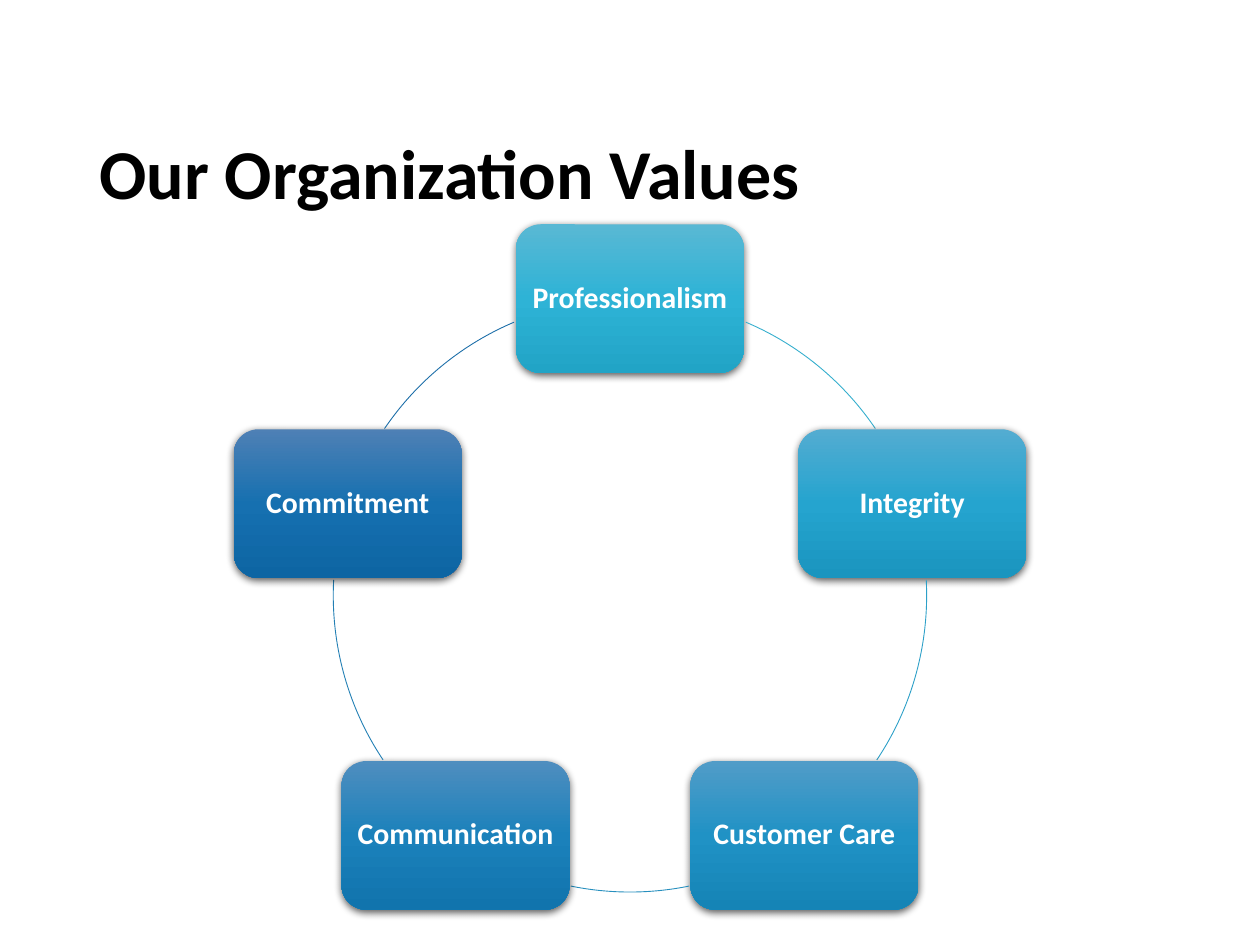
"""Build the organization values slide: five boxes joined by a ring of arcs."""
from copy import deepcopy
from dataclasses import dataclass
from math import cos, radians, sin

from lxml.etree import SubElement
from pptx import Presentation
from pptx.dml.color import RGBColor
from pptx.enum.shapes import MSO_SHAPE as Preset
from pptx.enum.text import MSO_ANCHOR as Anchor, PP_ALIGN as Align
from pptx.oxml.ns import qn
from pptx.shapes.autoshape import Shape
from pptx.shapes.shapetree import SlideShapes
from pptx.text.text import TextFrame
from pptx.util import Emu, Pt

PX = 4572
SLIDE_W, SLIDE_H = 2000, 1500
CENTER_X, CENTER_Y, RADIUS = 1000, 945, 471
BOX_W, BOX_H, INSET = 362, 236, 13


@dataclass(frozen=True)
class Theme:
    font: str = "Calibri"
    title_size: int = 40
    value_size: int = 17
    title_color: str = "000000"
    value_color: str = "FFFFFF"
    shadow_color: str = "000000"
    arc_width: float = 0.5


@dataclass(frozen=True)
class Value:
    label: str
    gradient: tuple[str, str, str]
    arc_color: str
    arc_start: float
    arc_end: float


THEME = Theme()
VALUES = (
    Value("Professionalism", ("59B8D4", "2EB3D6", "21A4C6"), "36AFCE", 293, 325.8),
    Value("Integrity", ("53ACD1", "25A4CF", "1A95BF"), "2DA0C8", 357, 33.7),
    Value("Customer Care", ("519CC8", "2092C5", "1584B6"), "278FBE", 78.5, 101.5),
    Value("Communication", ("4F8EBF", "1B81BB", "1174AD"), "227FB4", 146.3, 183),
    Value("Commitment", ("4E80B5", "1670B0", "0D65A3"), "1D6FA9", 214.2, 247),
)


def px(*lengths: float) -> list[Emu]:
    return [Emu(round(length * PX)) for length in lengths]


def apply(target: object, formats: dict) -> None:
    for name, value in formats.items():
        setattr(target, name, value)


def write(frame: TextFrame, wording: str, size: int, color: str, align: Align) -> None:
    apply(frame, {"word_wrap": True, "vertical_anchor": Anchor.MIDDLE})
    line = frame.paragraphs[0]
    apply(line, {"text": wording, "alignment": align, "line_spacing": 0.9})
    font = line.runs[0].font
    apply(font, {"name": THEME.font, "size": Pt(size), "bold": True})
    font.color.rgb = RGBColor.from_string(color)


def fill_gradient(box: Shape, colors: tuple[str, ...]) -> None:
    box.fill.gradient()
    box.fill.gradient_angle = 270
    first = box._element.spPr.find(".//" + qn("a:gs"))
    first.addnext(deepcopy(first))
    for index, (stop, color) in enumerate(zip(box.fill.gradient_stops, colors)):
        stop.position = index / 2
        stop.color.rgb = RGBColor.from_string(color)


def cast_shadow(box: Shape) -> None:
    box.shadow.inherit = False
    effects = box._element.spPr.find(qn("a:effectLst"))
    shadow = SubElement(effects, qn("a:outerShdw"), blurRad=str(Pt(4.5)),
                        dist=str(Pt(1.5)), dir="5400000", algn="ctr", rotWithShape="0")
    tone = SubElement(shadow, qn("a:srgbClr"), val=THEME.shadow_color)
    SubElement(tone, qn("a:alpha"), val="63000")


def draw_box(shapes: SlideShapes, value: Value, angle: float) -> None:
    left = CENTER_X + RADIUS * cos(radians(angle)) - BOX_W / 2
    top = CENTER_Y + RADIUS * sin(radians(angle)) - BOX_H / 2
    box = shapes.add_shape(Preset.ROUNDED_RECTANGLE, *px(left, top, BOX_W, BOX_H))
    fill_gradient(box, value.gradient)
    box.line.fill.background()
    cast_shadow(box)
    sides = ("left", "top", "right", "bottom")
    apply(box.text_frame, {f"margin_{side}": Emu(INSET * PX) for side in sides})
    write(box.text_frame, value.label, THEME.value_size, THEME.value_color, Align.CENTER)


def draw_arc(shapes: SlideShapes, value: Value) -> None:
    arc = shapes.add_shape(Preset.ARC, *px(CENTER_X - RADIUS, CENTER_Y - RADIUS,
                                          2 * RADIUS, 2 * RADIUS))
    for index, degrees in enumerate((value.arc_start, value.arc_end)):
        arc.adjustments[index] = degrees * 0.6
    arc.shadow.inherit = False
    arc.fill.background()
    arc.line.color.rgb = RGBColor.from_string(value.arc_color)
    arc.line.width = Pt(THEME.arc_width)


def main() -> None:
    deck = Presentation()
    apply(deck, {"slide_width": Emu(SLIDE_W * PX), "slide_height": Emu(SLIDE_H * PX)})
    shapes = deck.slides.add_slide(deck.slide_layouts[6]).shapes
    title = shapes.add_textbox(*px(138, 136, 1724, 290))
    write(title.text_frame, "Our Organization Values", THEME.title_size,
          THEME.title_color, Align.LEFT)
    for index, value in enumerate(VALUES):
        draw_box(shapes, value, index * 360 / len(VALUES) - 90)
        draw_arc(shapes, value)
    deck.save("out.pptx")


if __name__ == "__main__":
    main()
